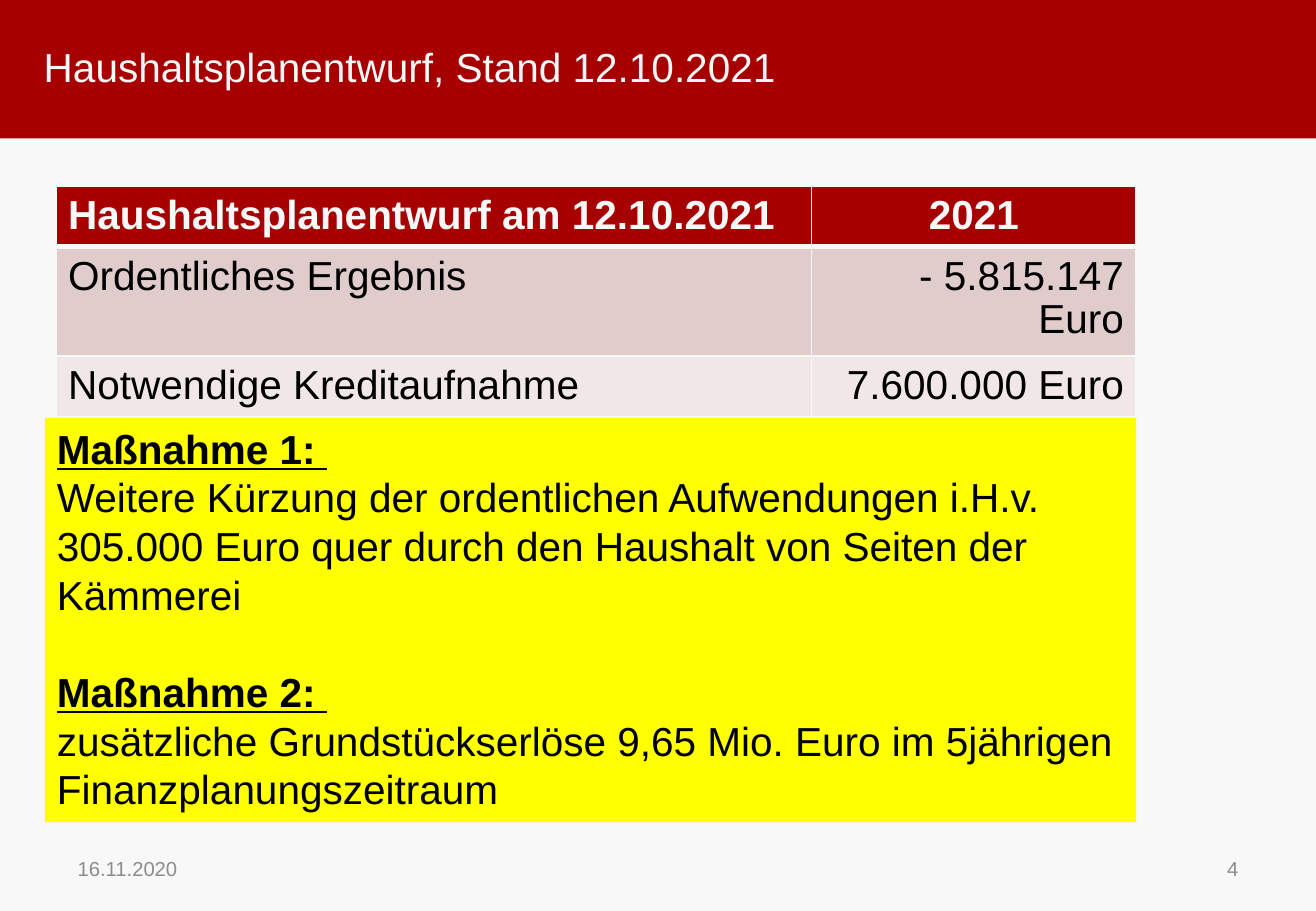
from lxml import etree
from pptx import Presentation
from pptx.dml.color import RGBColor
from pptx.enum.shapes import MSO_SHAPE
from pptx.enum.text import MSO_ANCHOR, PP_ALIGN
from pptx.oxml.ns import qn
from pptx.util import Inches, Pt

RECTANGLE = MSO_SHAPE.RECTANGLE
LEFT, CENTER, RIGHT = PP_ALIGN.LEFT, PP_ALIGN.CENTER, PP_ALIGN.RIGHT
TOP, MIDDLE = MSO_ANCHOR.TOP, MSO_ANCHOR.MIDDLE
RED = RGBColor(0xA6, 0x00, 0x00)
PAPER = RGBColor(0xF8, 0xF8, 0xF8)
GREY = RGBColor(0x8C, 0x8C, 0x8C)
YELLOW = RGBColor(0xFF, 0xFF, 0x00)
BLACK = RGBColor(0x00, 0x00, 0x00)
ROSE = RGBColor(0xE1, 0xCC, 0xCC)
PALE_ROSE = RGBColor(0xF1, 0xE7, 0xE7)

PAGE_WIDTH, PAGE_HEIGHT = 10.83, 7.5
FOOTER_WIDTH, FOOTER_MARGIN = 2.53, 0.54


def write(para, text, color, size=24, align=LEFT, spacing=1.0, **font_values):
    """Fill one paragraph with a single formatted run."""
    para.alignment = align
    para.line_spacing = spacing
    span = para.add_run()
    span.text = text
    span.font.color.rgb = color
    for name, value in {"name": "Arial", "size": Pt(size), **font_values}.items():
        setattr(span.font, name, value)


def add_block(left, top, width, height, fill=None, anchor=TOP):
    """Add a rectangle without outline and return its text frame."""
    block = page.shapes.add_shape(RECTANGLE, Inches(left), Inches(top),
                                  Inches(width), Inches(height))
    block.shadow.inherit = False
    block.line.fill.background()
    if fill is None:
        block.fill.background()
    else:
        block.fill.solid()
        block.fill.fore_color.rgb = fill
    block.text_frame.word_wrap = True
    block.text_frame.vertical_anchor = anchor
    return block.text_frame


deck = Presentation()
deck.slide_width, deck.slide_height = Inches(PAGE_WIDTH), Inches(PAGE_HEIGHT)
page = deck.slides.add_slide(deck.slide_layouts[6])
page.background.fill.solid()
page.background.fill.fore_color.rgb = PAPER

# Title band
add_block(0, 0, PAGE_WIDTH, 1.14, RED)
title = add_block(0.36, 0, 6.41, 1.09, anchor=MIDDLE)
for side in ("left", "top", "right", "bottom"):
    setattr(title, f"margin_{side}", 0)
write(title.paragraphs[0], "Haushaltsplanentwurf, Stand 12.10.2021", PAPER)

# Footer
for text, left, align in (
    ("16.11.2020", FOOTER_MARGIN, LEFT),
    ("4", PAGE_WIDTH - FOOTER_MARGIN - FOOTER_WIDTH, RIGHT),
):
    footer = add_block(left, 6.95, FOOTER_WIDTH, 0.4, anchor=MIDDLE)
    write(footer.paragraphs[0], text, GREY, size=12, align=align)

# Measures
measures = add_block(0.37, 3.44, 8.98, 3.33, YELLOW)
MEASURES = (
    ("Maßnahme 1: ", True),
    ("Weitere Kürzung der ordentlichen Aufwendungen i.H.v.", False),
    ("305.000 Euro quer durch den Haushalt von Seiten der Kämmerei", False),
    ("Maßnahme 2: ", True),
    ("zusätzliche Grundstückserlöse 9,65 Mio. Euro im 5jährigen Finanzplanungszeitraum", False),
)
for index, (text, heading) in enumerate(MEASURES):
    para = measures.add_paragraph() if index else measures.paragraphs[0]
    if index and heading:
        para.space_before = Pt(29)
    write(para, text, BLACK, bold=heading, underline=heading)

# Budget table
COLUMN_WIDTHS = (6.22, 2.67)
ROWS = (
    (0.5, RED, PAPER, CENTER, ("Haushaltsplanentwurf am 12.10.2021", "2021")),
    (0.9, ROSE, BLACK, RIGHT, ("Ordentliches Ergebnis", "- 5.815.147 Euro")),
    (0.5, PALE_ROSE, BLACK, RIGHT, ("Notwendige Kreditaufnahme", "7.600.000 Euro")),
)
budget = page.shapes.add_table(
    len(ROWS), len(COLUMN_WIDTHS), Inches(0.46), Inches(1.53),
    Inches(sum(COLUMN_WIDTHS)), Inches(sum(row[0] for row in ROWS))).table
for column, width in zip(budget.columns, COLUMN_WIDTHS):
    column.width = Inches(width)
for row_index, (height, fill, color, value_align, texts) in enumerate(ROWS):
    budget.rows[row_index].height = Inches(height)
    for column_index, text in enumerate(texts):
        cell = budget.cell(row_index, column_index)
        cell.margin_top = Inches(0.07)
        write(cell.text_frame.paragraphs[0], text, color, spacing=0.97,
              align=value_align if column_index else LEFT, bold=row_index == 0)
        properties = cell._tc.get_or_add_tcPr()
        for side in ("lnL", "lnR", "lnT", "lnB"):
            below_header = (row_index, side) in ((0, "lnB"), (1, "lnT"))
            border = etree.SubElement(properties, qn(f"a:{side}"),
                                      w=str(Pt(3 if below_header else 1)))
            border_fill = etree.SubElement(border, qn("a:solidFill"))
            etree.SubElement(border_fill, qn("a:srgbClr"), val=str(PAPER))
        cell.fill.solid()
        cell.fill.fore_color.rgb = fill

deck.save("out.pptx")
